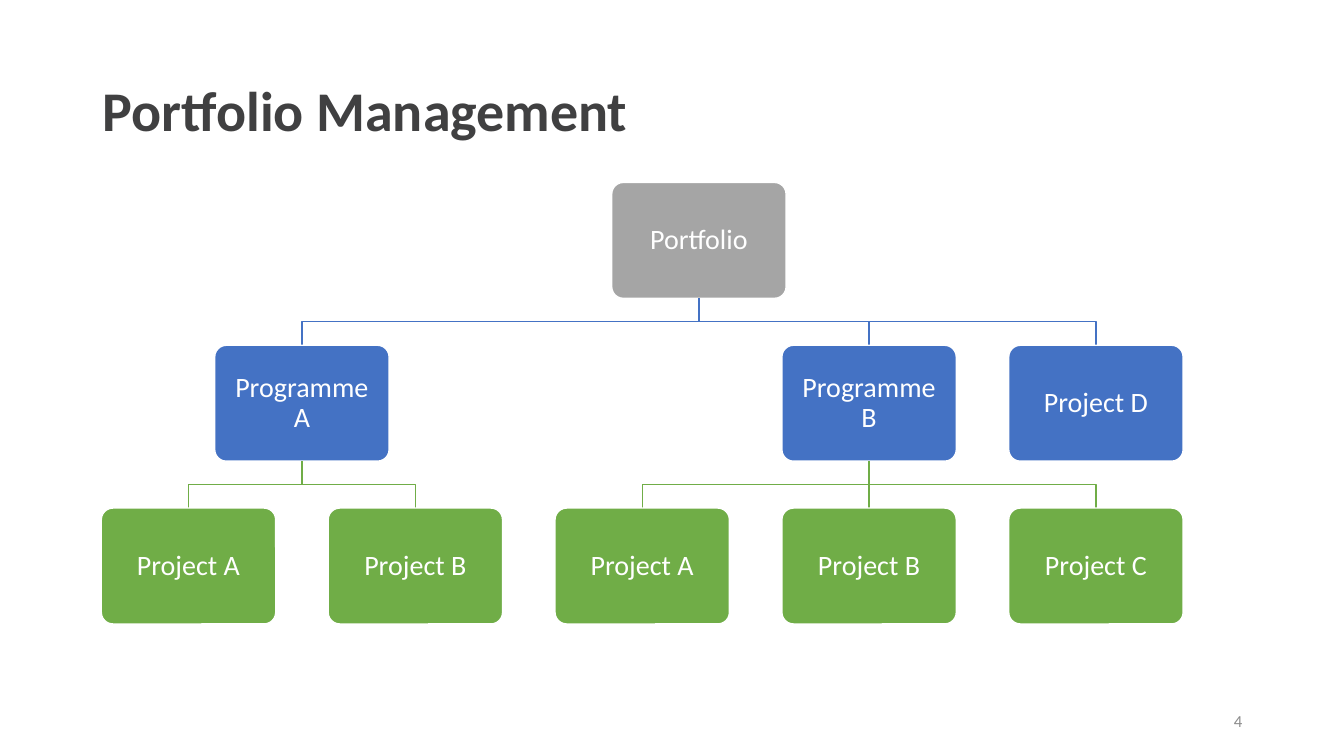
"""Build the portfolio management hierarchy slide."""
from pptx import Presentation
from pptx.dml.color import RGBColor
from pptx.enum.shapes import MSO_CONNECTOR, MSO_SHAPE
from pptx.enum.text import MSO_ANCHOR, PP_ALIGN
from pptx.oxml.ns import qn
from pptx.util import Inches, Pt
from lxml import etree

ROUNDED = MSO_SHAPE.ROUNDED_RECTANGLE
STRAIGHT = MSO_CONNECTOR.STRAIGHT
MIDDLE = MSO_ANCHOR.MIDDLE
LEFT, CENTER, RIGHT = PP_ALIGN.LEFT, PP_ALIGN.CENTER, PP_ALIGN.RIGHT

TITLE = "Portfolio Management"
PAGE_NUMBER = "4"
PORTFOLIO = ("Portfolio", [
    ("Programme A", [("Project A", []), ("Project B", [])]),
    ("Programme B", [("Project A", []), ("Project B", []), ("Project C", [])]),
    ("Project D", []),
])
PROJECT_D_COLUMN = 4

FONT = "Calibri"
COLORS = {"title": "404041", "number": "8C8C8C", "white": "FFFFFF",
          "portfolio": "A5A5A5", "programme": "4472C4", "project": "70AD47"}
LEVELS = ["portfolio", "programme", "project"]

SLIDE_W, SLIDE_H = 13.33, 7.5
BOX_W, BOX_H = 1.73, 1.15
FIRST_CENTER, COLUMN_STEP = 1.87, 2.25
FIRST_TOP, ROW_STEP = 1.81, 1.615
BOX_INSET = 0.11


def rgb(name):
    return RGBColor.from_string(COLORS[name])


def write(frame, text, size, color, align, spacing=None, bold=False):
    frame.word_wrap = True
    frame.vertical_anchor = MIDDLE
    paragraph = frame.paragraphs[0]
    paragraph.text = text
    paragraph.alignment = align
    paragraph.line_spacing = spacing
    font = paragraph.font
    font.name, font.size, font.bold = FONT, Pt(size), bold
    font.color.rgb = rgb(color)


def place(node, level, leaves):
    """Return the node with its column, centred over its first and last child."""
    label, children = node
    placed = [place(child, level + 1, leaves) for child in children]
    if placed:
        column = (placed[0]["column"] + placed[-1]["column"]) / 2
    elif level == 1:
        column = PROJECT_D_COLUMN
    else:
        column = next(leaves)
    return {"label": label, "level": level, "column": column, "children": placed}


def center_x(node):
    return FIRST_CENTER + node["column"] * COLUMN_STEP


def top_y(node):
    return FIRST_TOP + node["level"] * ROW_STEP


def draw_branch(shapes, parent, child):
    start_x, end_x = center_x(parent), center_x(child)
    start_y, end_y = top_y(parent) + BOX_H, top_y(child)
    if parent["column"] == child["column"]:
        branch = shapes.add_connector(STRAIGHT, Inches(start_x), Inches(start_y),
                                      Inches(end_x), Inches(end_y))
        etree.SubElement(branch._element.spPr, qn("a:effectLst"))
    else:
        middle_y = (start_y + end_y) / 2
        outline = shapes.build_freeform(Inches(start_x), Inches(start_y))
        bends = [(start_x, middle_y), (end_x, middle_y), (end_x, end_y)]
        outline.add_line_segments([(Inches(x), Inches(y)) for x, y in bends], close=False)
        branch = outline.convert_to_shape()
        branch.fill.background()
        branch.shadow.inherit = False
    branch.line.color.rgb = rgb(LEVELS[child["level"]])
    branch.line.width = Pt(1)


def draw_tree(shapes, node):
    box = shapes.add_shape(ROUNDED, Inches(center_x(node) - BOX_W / 2),
                           Inches(top_y(node)), Inches(BOX_W), Inches(BOX_H))
    box.adjustments[0] = 0.1
    box.shadow.inherit = False
    box.fill.solid()
    box.fill.fore_color.rgb = rgb(LEVELS[node["level"]])
    box.line.color.rgb = rgb("white")
    box.line.width = Pt(1)
    frame = box.text_frame
    frame.margin_left = frame.margin_right = Inches(BOX_INSET)
    frame.margin_top = frame.margin_bottom = Inches(BOX_INSET)
    write(frame, node["label"], 20, "white", CENTER, 0.9)
    for child in node["children"]:
        draw_branch(shapes, node, child)
        draw_tree(shapes, child)


def main():
    deck = Presentation()
    deck.slide_width, deck.slide_height = Inches(SLIDE_W), Inches(SLIDE_H)
    slide = deck.slides.add_slide(deck.slide_layouts[5])

    title = slide.shapes.title
    title.left, title.top = Inches(0.92), Inches(0.4)
    title.width, title.height = Inches(11.5), Inches(1.45)
    write(title.text_frame, TITLE, 40, "title", LEFT, 0.9, True)

    draw_tree(slide.shapes, place(PORTFOLIO, 0, iter(range(5))))

    number = slide.shapes.add_textbox(Inches(9.42), Inches(6.95), Inches(3), Inches(0.4))
    write(number.text_frame, PAGE_NUMBER, 12, "number", RIGHT)
    deck.save("out.pptx")


if __name__ == "__main__":
    main()
